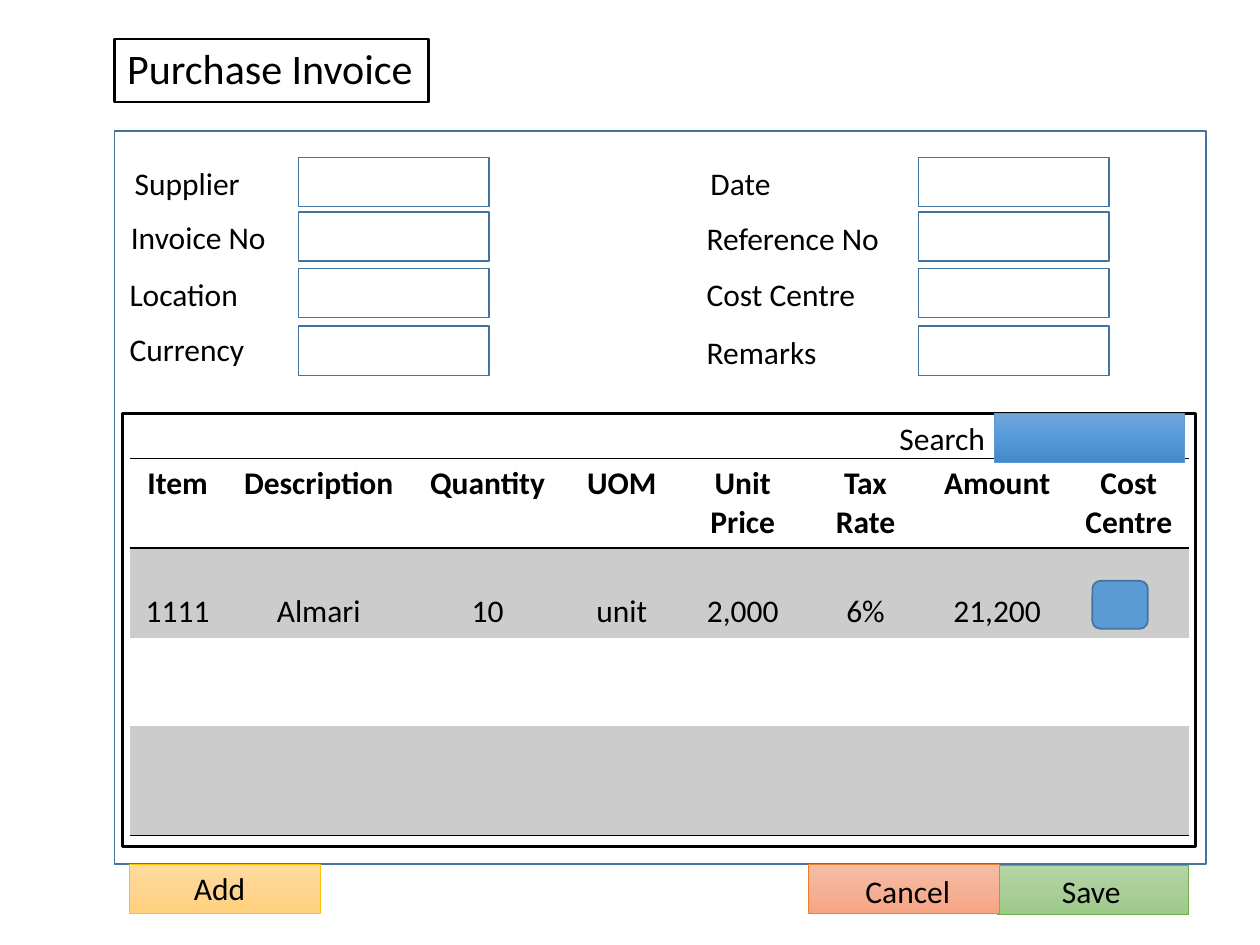
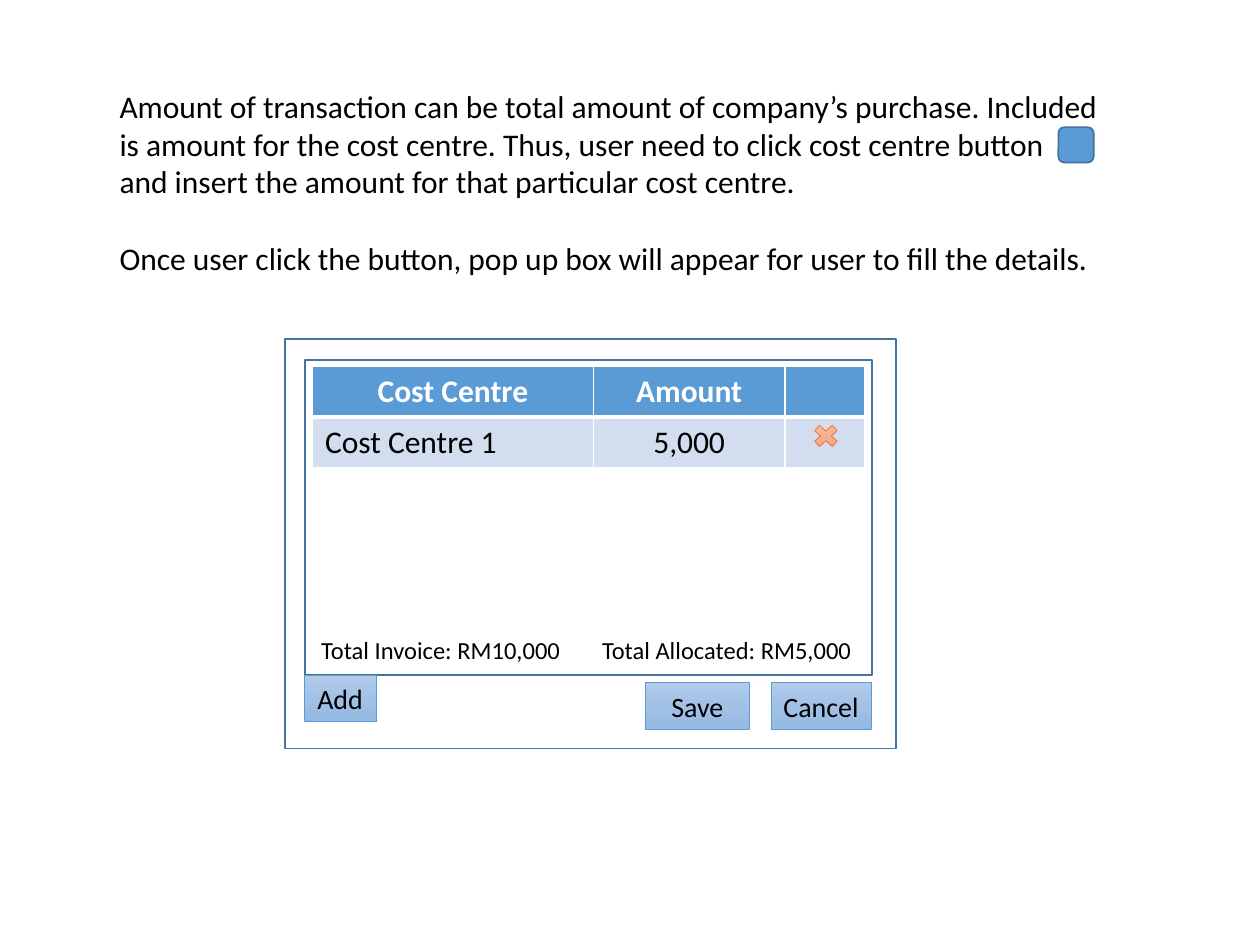
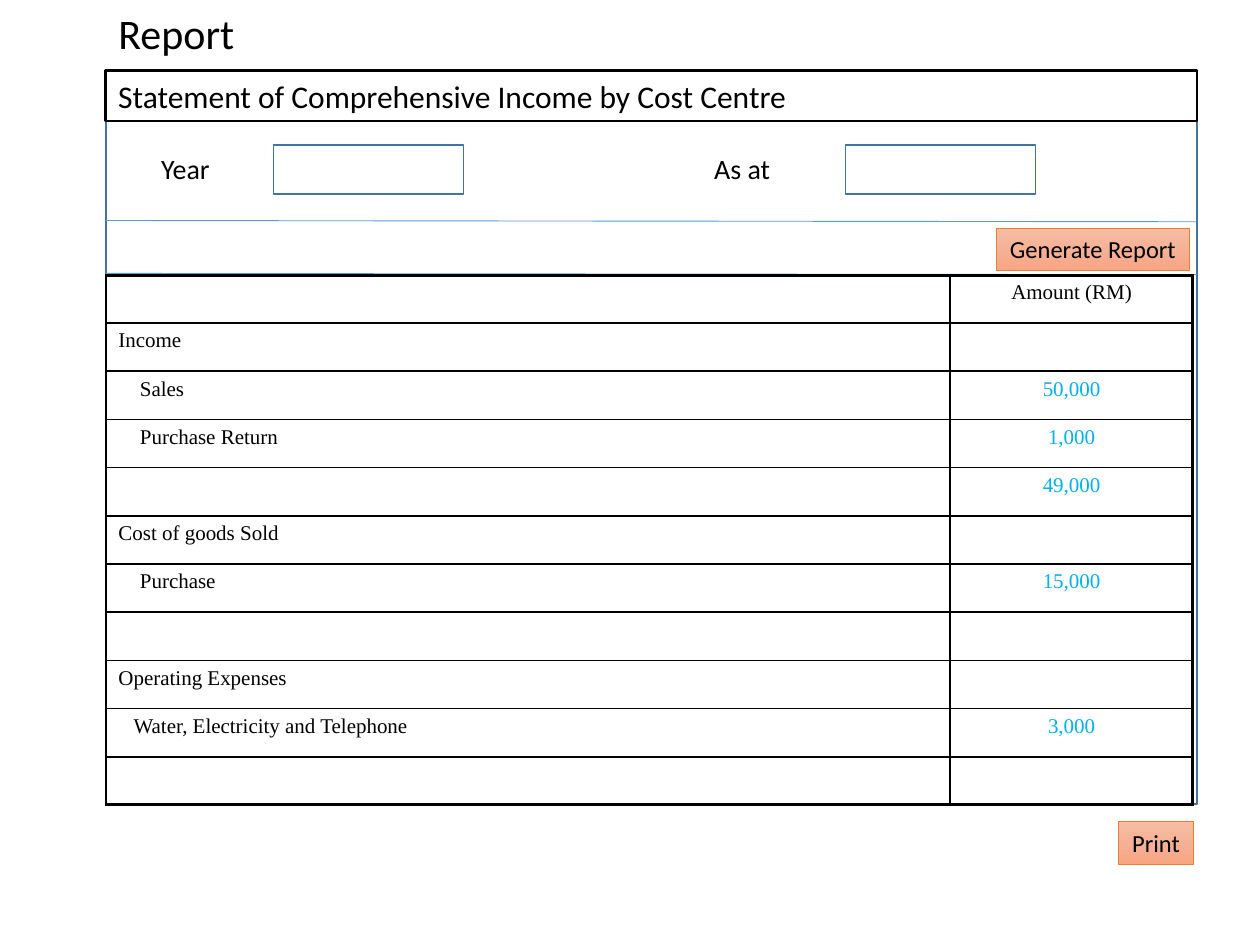
from copy import deepcopy
from typing import NamedTuple, Optional, Sequence

from lxml.etree import SubElement
from pptx import Presentation
from pptx.dml.color import RGBColor
from pptx.enum.shapes import MSO_CONNECTOR, MSO_SHAPE as Preset
from pptx.enum.text import MSO_ANCHOR as Anchor, PP_ALIGN as Align
from pptx.oxml import parse_xml
from pptx.oxml.ns import nsdecls, qn
from pptx.util import Inches, Pt

BLACK, WHITE = "000000", "FFFFFF"
BLUE, DARK_BLUE, PALE_BLUE = "5B9BD5", "43739E", "D2DEEF"
BAND_GREY, FIGURE_BLUE = "CCCCCC", "00B0F0"
BODY_FONT, REPORT_FONT = "Calibri", "Times New Roman"
NO_TABLE_STYLE = "{2D5ABB26-0587-4C30-8999-92F81FD0307C}"
TITLE_ONLY, BLANK = 5, 6
FIELD_SIZE = (1.51, 0.39)


class Box(NamedTuple):
    left: float
    top: float
    width: float
    height: float

    def lengths(self) -> list:
        return [Inches(value) for value in self]


class Look(NamedTuple):
    """Fill colours (none, one, or three for a gradient) and an outline."""
    fill: tuple = ()
    line: Optional[str] = None
    width: float = 1


class Font(NamedTuple):
    size: float = 18
    color: str = BLACK
    bold: bool = False
    name: str = BODY_FONT


class Label(NamedTuple):
    text: str
    box: Box
    size: float = 18


class Button(NamedTuple):
    text: str
    box: Box
    look: Look
    size: float
    align: Align = Align.CENTER


class Edge(NamedTuple):
    color: str
    width: float


FIELD = Look(line=DARK_BLUE)
FRAME = Look(line=BLACK, width=1.5)
COST_BUTTON = Look((BLUE,), DARK_BLUE)
SEARCH_BOX = Look(("71A6DB", "559BDB", "448ACA"), BLUE, 0.5)
GREEN = Look(("B5D5A7", "AACE9A", "9CC987"), "70AD47", 0.5)
ORANGE = Look(("F7BDA5", "F5B196", "F8A582"), "ED7D31", 0.5)
YELLOW = Look(("FFDB9E", "FFD590", "FFD07C"), "FFC000", 0.5)
LIGHT_BLUE = Look(("B1CBE9", "A3C1E5", "93B9E4"), BLUE, 0.5)


def rgb(color: str) -> RGBColor:
    return RGBColor.from_string(color)


def apply_look(shape, look: Look) -> None:
    fill = shape.fill
    if len(look.fill) == 3:
        fill.gradient()
        fill.gradient_angle = 270
        stop_list = shape._element.spPr.find(".//" + qn("a:gsLst"))
        stop_list.insert(1, deepcopy(stop_list[0]))
        for stop, color, position in zip(fill.gradient_stops, look.fill, (0, 0.5, 1)):
            stop.color.rgb = rgb(color)
            stop.position = position
    elif look.fill:
        fill.solid()
        fill.fore_color.rgb = rgb(look.fill[0])
    else:
        fill.background()
    if look.line:
        shape.line.color.rgb = rgb(look.line)
        shape.line.width = Pt(look.width)
    else:
        shape.line.fill.background()


def add_run(paragraph, text: str, font: Font) -> None:
    run = paragraph.add_run()
    run.text = text
    run.font.size = Pt(font.size)
    run.font.name = font.name
    run.font.bold = font.bold
    run.font.color.rgb = rgb(font.color)


def write(frame, text: str, font: Font = Font(), align: Align = Align.LEFT) -> None:
    """Fill a text frame, one paragraph for each line of text."""
    for index, line in enumerate(text.split("\n")):
        paragraph = frame.add_paragraph() if index else frame.paragraphs[0]
        paragraph.alignment = align
        add_run(paragraph, line, font)


def add_shape(slide, box: Box, look: Look, preset: Preset = Preset.RECTANGLE):
    shape = slide.shapes.add_shape(preset, *box.lengths())
    shape.shadow.inherit = False
    apply_look(shape, look)
    return shape


def add_label(slide, label: Label) -> None:
    frame = slide.shapes.add_textbox(*label.box.lengths()).text_frame
    frame.word_wrap = False
    write(frame, label.text, Font(label.size))


def add_button(slide, button: Button) -> None:
    frame = add_shape(slide, button.box, button.look).text_frame
    frame.word_wrap = False
    frame.vertical_anchor = Anchor.TOP
    write(frame, button.text, Font(button.size), button.align)


def add_title(slide, text: str, box: Box, look: Look = Look()) -> None:
    title = slide.shapes.title
    title.left, title.top, title.width, title.height = box.lengths()
    apply_look(title, look)
    title.text_frame.word_wrap = True
    title.text_frame.vertical_anchor = Anchor.MIDDLE
    write(title.text_frame, text, Font(24))
    title.text_frame.paragraphs[0].line_spacing = 0.9


def add_line(slide, left: float, top: float, right: float, bottom: float) -> None:
    connector = slide.shapes.add_connector(
        MSO_CONNECTOR.STRAIGHT, Inches(left), Inches(top), Inches(right), Inches(bottom))
    connector.line.color.rgb = rgb(BLUE)
    connector.line.width = Pt(0.5)
    SubElement(connector._element.spPr, qn("a:effectLst"))


def add_table(slide, left: float, top: float, columns: Sequence[float], rows: Sequence[float]):
    box = Box(left, top, sum(columns), sum(rows))
    table = slide.shapes.add_table(len(rows), len(columns), *box.lengths()).table
    table._tbl.tblPr.find(qn("a:tableStyleId")).text = NO_TABLE_STYLE
    table.first_row = table.horz_banding = False
    for column, width in zip(table.columns, columns):
        column.width = Inches(width)
    for row, height in zip(table.rows, rows):
        row.height = Inches(height)
    return table


def fill_cell(cell, color: Optional[str]) -> None:
    if color:
        cell.fill.solid()
        cell.fill.fore_color.rgb = rgb(color)
    else:
        cell.fill.background()


def set_borders(cell, **edges: Edge) -> None:
    """Draw the sides L, R, T and B that are given."""
    properties = cell._tc.get_or_add_tcPr()
    sides = [side for side in "LRTB" if side in edges]
    for index, side in enumerate(sides):
        color, width = edges[side]
        properties.insert(index, parse_xml(
            f'<a:ln{side} {nsdecls("a")} w="{Pt(width)}"><a:solidFill>'
            f'<a:srgbClr val="{color}"/></a:solidFill></a:ln{side}>'))


def write_cell(cell, text: str, font: Font, align: Align) -> None:
    if text:
        write(cell.text_frame, text, font, align)
    else:
        end = cell.text_frame.paragraphs[0]._p.get_or_add_endParaRPr()
        end.set("sz", str(font.size * 100))


def add_item_table(slide) -> None:
    headings = ("Item", "Description", "Quantity", "UOM", "Unit\nPrice", "Tax\nRate",
                "Amount", "Cost\nCentre")
    item = ("1111", "Almari", "10", "unit", "2,000", "6%", "21,200", "")
    table = add_table(slide, 1.03, 3.64, (0.76, 1.48, 1.2, 0.93, 0.99, 0.96, 1.13, 0.96),
                      (0.71, 0.71, 0.7, 0.87))
    rule = Edge(BLACK, 1)
    for column, (heading, value) in enumerate(zip(headings, item)):
        head, entry, spare, last = (table.cell(row, column) for row in range(4))
        write_cell(head, heading, Font(bold=True), Align.CENTER)
        write_cell(entry, value, Font(), Align.CENTER)
        entry.vertical_anchor = Anchor.BOTTOM
        for cell, color in ((head, None), (entry, BAND_GREY), (spare, None), (last, BAND_GREY)):
            fill_cell(cell, color)
        set_borders(head, T=rule, B=rule)
        set_borders(last, B=rule)


def build_invoice(presentation) -> None:
    slide = presentation.slides.add_slide(presentation.slide_layouts[TITLE_ONLY])
    add_title(slide, "Purchase Invoice", Box(0.91, 0.31, 2.49, 0.5), FRAME)
    add_item_table(slide)
    add_shape(slide, Box(0.91, 1.04, 8.66, 5.82), FIELD)

    for top in (1.25, 1.68, 2.13, 2.59):
        for left in (2.37, 7.29):
            add_shape(slide, Box(left, top, *FIELD_SIZE), FIELD)
    for label in (
        Label("Supplier", Box(0.97, 1.25, 1.05, 0.39)),
        Label("Invoice No", Box(0.94, 1.68, 1.28, 0.39)),
        Label("Location", Box(0.93, 2.13, 1.07, 0.39)),
        Label("Currency", Box(0.93, 2.57, 1.12, 0.39)),
        Label("Date", Box(5.54, 1.25, 0.68, 0.39)),
        Label("Reference No", Box(5.51, 1.69, 1.59, 0.39)),
        Label("Cost Centre", Box(5.51, 2.13, 1.39, 0.39)),
        Label("Remarks", Box(5.51, 2.59, 1.08, 0.39)),
    ):
        add_label(slide, label)

    add_shape(slide, Box(0.97, 3.28, 8.52, 3.44), FRAME)
    add_shape(slide, Box(7.89, 3.28, *FIELD_SIZE), SEARCH_BOX)
    add_label(slide, Label("Search", Box(7.04, 3.28, 0.89, 0.39)))
    add_shape(slide, Box(8.67, 4.61, 0.44, 0.38), COST_BUTTON, Preset.ROUNDED_RECTANGLE)

    for left, top, look, label in (
        (7.92, 6.87, GREEN, Label("Save", Box(8.33, 6.87, 0.67, 0.4))),
        (6.42, 6.86, ORANGE, Label("Cancel", Box(6.77, 6.87, 0.88, 0.4))),
        (1.03, 6.86, YELLOW, Label("Add", Box(1.44, 6.85, 0.61, 0.4))),
    ):
        add_shape(slide, Box(left, top, *FIELD_SIZE), look)
        add_label(slide, label)


def add_allocation_table(slide) -> None:
    table = add_table(slide, 2.48, 2.91, (2.23, 1.52, 0.63), (0.4, 0.4))
    thin, thick = Edge(WHITE, 1), Edge(WHITE, 3)
    headings, values = ("Cost Centre", "Amount", ""), ("Cost Centre 1", "5,000", "")
    value_aligns = (Align.LEFT, Align.CENTER, Align.CENTER)
    for column, (heading, value, align) in enumerate(zip(headings, values, value_aligns)):
        head, entry = table.cell(0, column), table.cell(1, column)
        write_cell(head, heading, Font(color=WHITE, bold=True), Align.CENTER)
        write_cell(entry, value, Font(), align)
        fill_cell(head, BLUE)
        fill_cell(entry, PALE_BLUE)
        set_borders(head, L=thin, R=thin, T=thin, B=thick)
        set_borders(entry, L=thin, R=thin, T=thick, B=thin)


def build_allocation(presentation) -> None:
    slide = presentation.slides.add_slide(presentation.slide_layouts[BLANK])
    frame = slide.shapes.add_textbox(*Box(0.85, 0.64, 8.11, 1.62).lengths()).text_frame
    frame.word_wrap = True
    first = frame.paragraphs[0]
    add_run(first, "Amount of transaction can be total amount of company’s purchase. Included "
            "is amount for the cost centre. Thus, user need to click cost centre button", Font())
    first.add_line_break()
    add_run(first, "and insert the amount for that particular cost centre.", Font())
    second = frame.add_paragraph()
    second.space_before = Pt(22)
    add_run(second, "Once user click the button, pop up box will appear for user to fill "
            "the details.", Font())
    add_shape(slide, Box(8.4, 1.01, 0.28, 0.28), COST_BUTTON, Preset.ROUNDED_RECTANGLE)

    add_shape(slide, Box(2.26, 2.69, 4.85, 3.25), FIELD)
    add_shape(slide, Box(2.42, 2.86, 4.5, 2.5), FIELD)
    add_allocation_table(slide)
    add_shape(slide, Box(6.42, 3.34, 0.27, 0.24), ORANGE, Preset.MATH_MULTIPLY)
    total = Look((WHITE,))
    for button in (
        Button("Total Allocated: RM5,000", Box(4.68, 4.99, 2.2, 0.34), total, 14, Align.LEFT),
        Button("Total Invoice: RM10,000", Box(2.45, 4.99, 2.12, 0.34), total, 14, Align.LEFT),
        Button("Cancel", Box(6.12, 5.42, 0.8, 0.37), LIGHT_BLUE, 16, Align.LEFT),
        Button("Save", Box(5.12, 5.42, 0.83, 0.37), LIGHT_BLUE, 16),
        Button("Add", Box(2.42, 5.36, 0.57, 0.37), LIGHT_BLUE, 16, Align.LEFT),
    ):
        add_button(slide, button)


class Entry(NamedTuple):
    name: str = ""
    amount: str = ""
    indent: float = 0
    color: str = FIGURE_BLUE


STATEMENT = (
    Entry(amount="Amount (RM)", color=BLACK),
    Entry("Income"),
    Entry("Sales", "50,000", 0.17),
    Entry("Purchase Return", "1,000", 0.17),
    Entry(amount="49,000"),
    Entry("Cost of goods Sold"),
    Entry("Purchase", "15,000", 0.17),
    Entry(),
    Entry("Operating Expenses"),
    Entry("Water, Electricity and Telephone", "3,000", 0.12),
    Entry(),
)


def add_statement_table(slide) -> None:
    table = add_table(slide, 0.84, 2.18, (6.7, 1.93), [0.383] * len(STATEMENT))
    rule = Edge(BLACK, 1)
    for row, entry in enumerate(STATEMENT):
        name, amount = table.cell(row, 0), table.cell(row, 1)
        write_cell(name, entry.name, Font(12, name=REPORT_FONT), Align.LEFT)
        write_cell(amount, entry.amount, Font(12, entry.color, name=REPORT_FONT), Align.CENTER)
        if entry.indent:
            properties = name.text_frame.paragraphs[0]._p.get_or_add_pPr()
            properties.set("marL", str(Inches(entry.indent)))
        for cell in (name, amount):
            fill_cell(cell, None)
            set_borders(cell, L=rule, R=rule, T=rule, B=rule)


def build_report(presentation) -> None:
    slide = presentation.slides.add_slide(presentation.slide_layouts[TITLE_ONLY])
    add_title(slide, "Report", Box(0.84, 0, 8.62, 0.57))
    for label, field_left in ((Label("Year", Box(1.18, 1.15, 0.59, 0.37), 16), 2.17),
                              (Label("As at", Box(5.57, 1.15, 0.65, 0.37), 16), 6.71)):
        add_label(slide, label)
        add_shape(slide, Box(field_left, 1.15, *FIELD_SIZE), FIELD)
    add_shape(slide, Box(0.84, 0.56, 8.66, 5.82), FIELD)
    add_button(slide, Button("Statement of Comprehensive Income by Cost Centre",
                             Box(0.84, 0.56, 8.66, 0.4), FRAME, 18, Align.LEFT))
    for top in (1.75, 2.17):
        add_line(slide, 0.84, top, 9.5, top + 0.01)
    add_button(slide, Button("Generate Report", Box(7.91, 1.81, 1.53, 0.34), ORANGE, 14))
    add_shape(slide, Box(0.84, 2.19, 8.62, 4.19), FRAME)
    add_statement_table(slide)
    add_button(slide, Button("Print", Box(8.88, 6.52, 0.59, 0.34), ORANGE, 14))


def main() -> None:
    presentation = Presentation()
    presentation.slide_width, presentation.slide_height = Inches(10), Inches(7.5)
    build_invoice(presentation)
    build_allocation(presentation)
    build_report(presentation)
    presentation.save("out.pptx")


if __name__ == "__main__":
    main()
